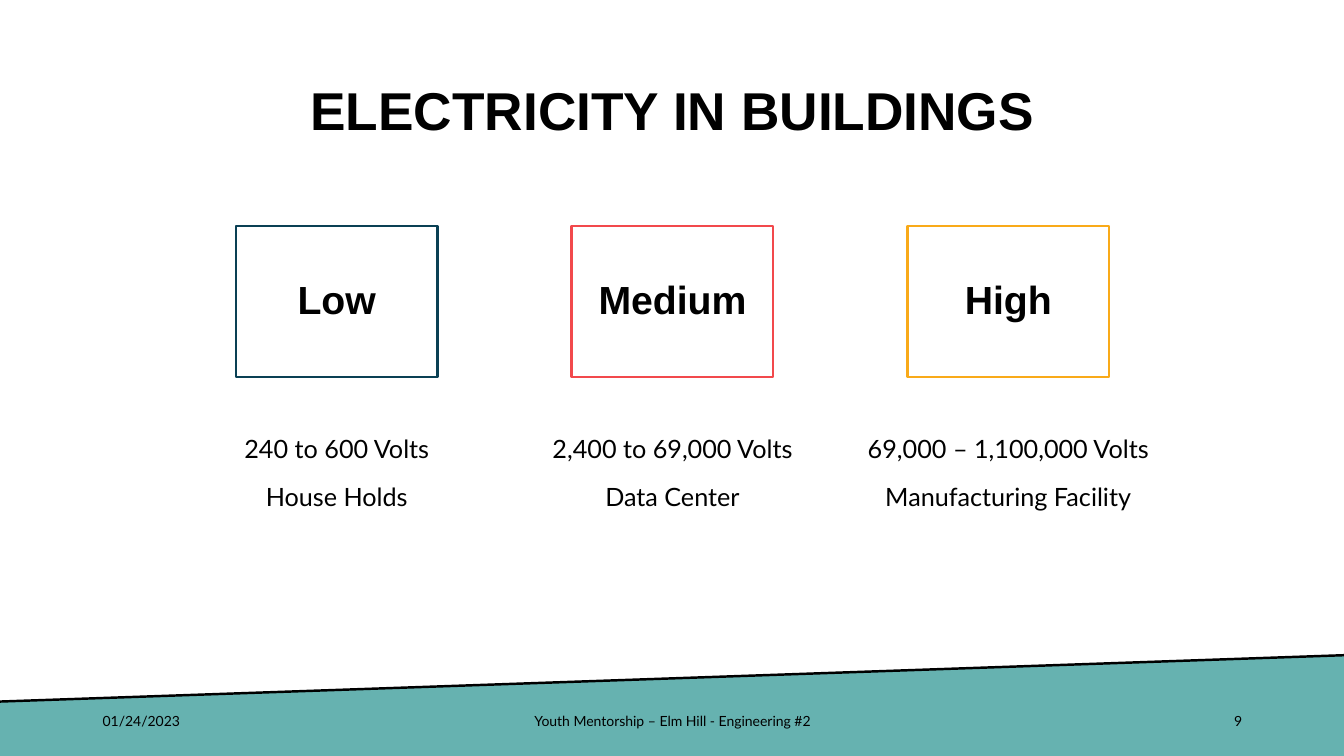
import pptx
import pptx.util
import pptx.dml.color
import pptx.enum.shapes
import pptx.enum.text
import pptx.oxml.ns
import lxml.etree

Inches, Pt = pptx.util.Inches, pptx.util.Pt
ALIGN = pptx.enum.text.PP_ALIGN
ANCHOR = pptx.enum.text.MSO_ANCHOR

# Content
TITLE = "ELECTRICITY IN BUILDINGS"
VOLTAGE_CLASSES = [
    ("Low", "navy", ["240 to 600 Volts", "House Holds"]),
    ("Medium", "red", ["2,400 to 69,000 Volts", "Data Center"]),
    ("High", "amber", ["69,000 – 1,100,000 Volts", "Manufacturing Facility"]),
]
FOOTER = [  # text, left, width, alignment
    ("01/24/2023", 0.92, 3, ALIGN.LEFT),
    ("Youth Mentorship – Elm Hill - Engineering #2", 4.42, 4.5, ALIGN.CENTER),
    ("9", 9.42, 3, ALIGN.RIGHT),
]
COLORS = {"black": "000000", "white": "FFFFFF", "teal": "66B2B0",
          "navy": "0A4054", "red": "F2494C", "amber": "F9AA19"}

# Geometry in inches
SLIDE_W, SLIDE_H = 13.33, 7.5
BAND_LEFT_Y, BAND_RIGHT_Y = 6.96, 6.5
FIRST_CENTER, PITCH = 3.34, 3.33
BOX_W, BOX_H, BOX_TOP = 2, 1.5, 2.24
DETAIL_W, DETAIL_H, DETAIL_TOP = 3, 1.75, 4.22


def rgb(name):
    return pptx.dml.color.RGBColor.from_string(COLORS[name])


def place(part, left, top, width, height):
    part.left, part.top = Inches(left), Inches(top)
    part.width, part.height = Inches(width), Inches(height)


def write(part, lines, size, font, align, bold=False, anchor=ANCHOR.MIDDLE,
          spacing=None, before=0):
    frame = part.text_frame
    frame.word_wrap = True
    frame.auto_size = pptx.enum.text.MSO_AUTO_SIZE.NONE
    frame.vertical_anchor = anchor
    for i, line in enumerate(lines):
        paragraph = frame.add_paragraph() if i else frame.paragraphs[0]
        paragraph.alignment = align
        paragraph.line_spacing = spacing
        paragraph.space_before = Pt(before)
        run = paragraph.add_run()
        run.text = line
        run.font.size, run.font.name, run.font.bold = Pt(size), font, bold
        run.font.color.rgb = rgb("black")


def remove_bullets(part):
    for paragraph in part.text_frame.paragraphs:
        properties = paragraph._p.get_or_add_pPr()
        properties.set("marL", "0")
        properties.set("indent", "0")
        lxml.etree.SubElement(properties, pptx.oxml.ns.qn("a:buNone"))


presentation = pptx.Presentation()
presentation.slide_width, presentation.slide_height = Inches(SLIDE_W), Inches(SLIDE_H)
slide = presentation.slides.add_slide(presentation.slide_layouts[4])
slide.background.fill.solid()
slide.background.fill.fore_color.rgb = rgb("white")

# Slanted footer band with its edge line
outline = slide.shapes.build_freeform(Inches(0), Inches(BAND_LEFT_Y))
outline.add_line_segments([(Inches(x), Inches(y)) for x, y in [
    (SLIDE_W, BAND_RIGHT_Y), (SLIDE_W, SLIDE_H), (0, SLIDE_H)]], close=True)
band = outline.convert_to_shape()
band.shadow.inherit = False
band.fill.solid()
band.fill.fore_color.rgb = rgb("teal")
band.line.fill.background()

edge = slide.shapes.add_connector(
    pptx.enum.shapes.MSO_CONNECTOR.STRAIGHT,
    Inches(SLIDE_W), Inches(BAND_RIGHT_Y), Inches(0), Inches(BAND_LEFT_Y))
edge.line.color.rgb = rgb("black")
edge.line.width = Pt(1.75)
lxml.etree.SubElement(edge._element.spPr, pptx.oxml.ns.qn("a:effectLst"))

# Title
title = slide.shapes.title
place(title, 0.92, 0.4, 11.5, 1.45)
write(title, [TITLE], 38, "Arial", ALIGN.CENTER, bold=True, spacing=0.9)

# Voltage classes: outlined box above its details
details, spare = list(slide.placeholders)[1:4], list(slide.placeholders)[4]
spare._element.getparent().remove(spare._element)
for i, ((level, color, facts), detail) in enumerate(zip(VOLTAGE_CLASSES, details)):
    center = FIRST_CENTER + i * PITCH
    box = slide.shapes.add_shape(
        pptx.enum.shapes.MSO_SHAPE.RECTANGLE, Inches(center - BOX_W / 2),
        Inches(BOX_TOP), Inches(BOX_W), Inches(BOX_H))
    box.shadow.inherit = False
    box.fill.background()
    box.line.color.rgb = rgb(color)
    box.line.width = Pt(1.75)
    write(box, [level], 28, "Arial", ALIGN.CENTER, bold=True, spacing=0.9)

    place(detail, center - DETAIL_W / 2, DETAIL_TOP, DETAIL_W, DETAIL_H)
    write(detail, facts, 18, "Lato", ALIGN.CENTER, anchor=ANCHOR.TOP,
          spacing=Pt(24), before=10)
    remove_bullets(detail)

# Footer
for text, left, width, align in FOOTER:
    note = slide.shapes.add_textbox(Inches(left), Inches(6.95), Inches(width), Inches(0.4))
    write(note, [text], 10, "Lato", align)

presentation.save("out.pptx")
